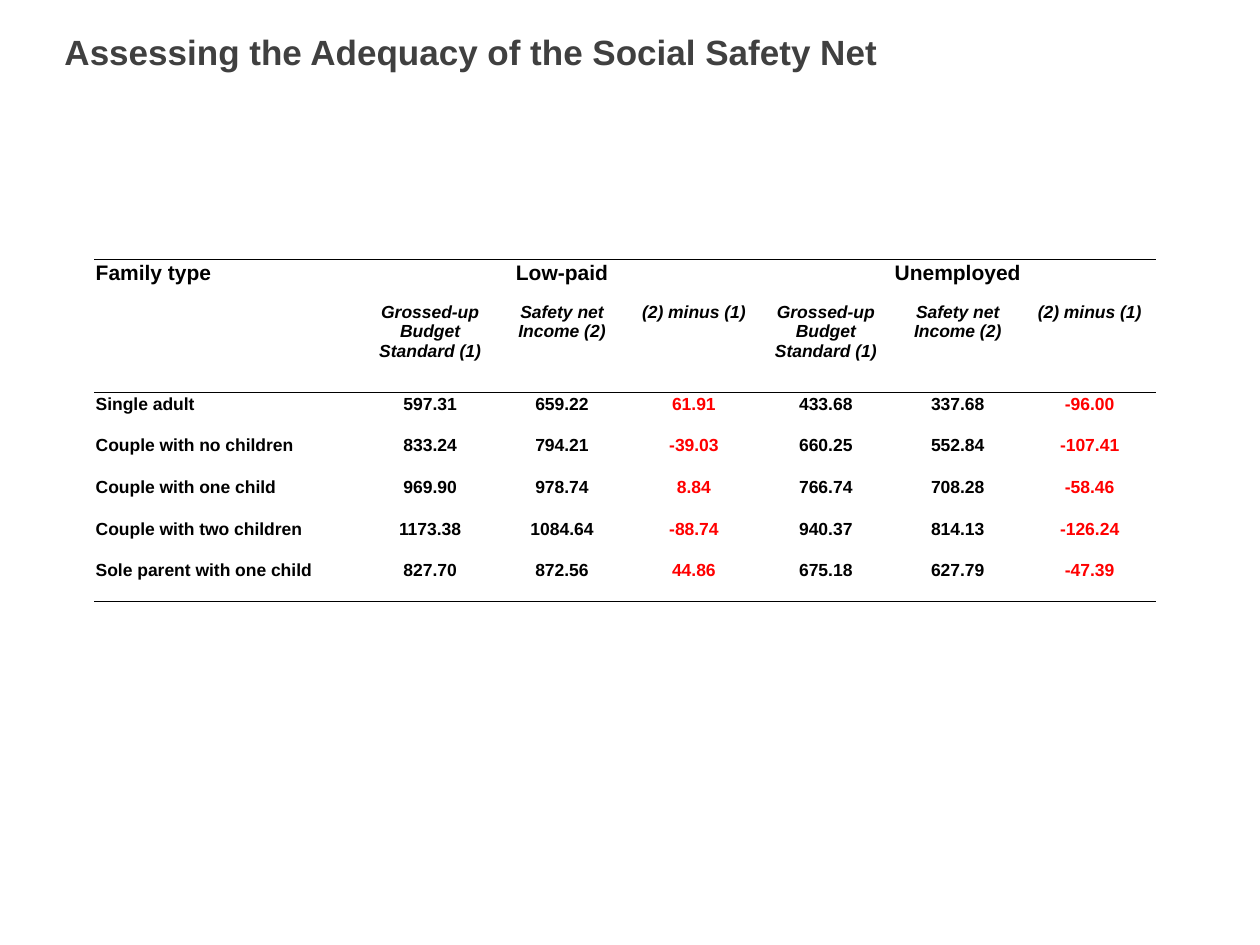
from lxml import etree
from pptx import Presentation
from pptx.dml.color import RGBColor
from pptx.enum.text import MSO_ANCHOR, MSO_AUTO_SIZE, PP_ALIGN
from pptx.oxml.ns import qn
from pptx.util import Cm, Pt

LEFT, CENTER = PP_ALIGN.LEFT, PP_ALIGN.CENTER
TOP, MIDDLE = MSO_ANCHOR.TOP, MSO_ANCHOR.MIDDLE
GROW = MSO_AUTO_SIZE.SHAPE_TO_FIT_TEXT

TITLE_GREY = RGBColor(0x40, 0x40, 0x40)
BLACK = RGBColor(0, 0, 0)
RED = RGBColor(0xFF, 0, 0)
FONT = "Arial"

MEASURES = ["Grossed-up Budget Standard (1)", "Safety net Income (2)", "(2) minus (1)"]
ROWS = [
    ["Family type", "Low-paid", "", "", "Unemployed", "", ""],
    [""] + MEASURES * 2,
    ["Single adult", "597.31", "659.22", "61.91", "433.68", "337.68", "-96.00"],
    ["Couple with no children", "833.24", "794.21", "-39.03", "660.25", "552.84", "-107.41"],
    ["Couple with one child", "969.90", "978.74", "8.84", "766.74", "708.28", "-58.46"],
    ["Couple with two children", "1173.38", "1084.64", "-88.74", "940.37", "814.13", "-126.24"],
    ["Sole parent with one child", "827.70", "872.56", "44.86", "675.18", "627.79", "-47.39"],
]
GROUP_ROW, MEASURE_ROW, FIRST_DATA_ROW = 0, 1, 2
GROUP_STARTS = (1, 4)
DIFFERENCE_COLUMNS = (3, 6)
RULED_ABOVE = (GROUP_ROW, FIRST_DATA_ROW)
RULED_BELOW = (MEASURE_ROW, len(ROWS) - 1)


def format_paragraph(paragraph, size, color, align, italic=False):
    paragraph.alignment = align
    font = paragraph.font
    font.name, font.size, font.bold, font.italic = FONT, Pt(size), True, italic
    font.color.rgb = color


def rule_cell(cell, above, below):
    properties = cell._tc.get_or_add_tcPr()
    for side, ruled in (("L", False), ("R", False), ("T", above), ("B", below)):
        line = etree.SubElement(properties, qn(f"a:ln{side}"), w=str(Pt(0.5)))
        if ruled:
            fill = etree.SubElement(line, qn("a:solidFill"))
            etree.SubElement(fill, qn("a:srgbClr"), val=str(BLACK))
        else:
            etree.SubElement(line, qn("a:noFill"))


def add_title(slide, left, top, width, height):
    title = slide.shapes.title
    title.left, title.top, title.width, title.height = left, top, width, height
    frame = title.text_frame
    frame.text = "Assessing the Adequacy of the Social Safety Net"
    frame.margin_left = frame.margin_right = frame.margin_top = frame.margin_bottom = 0
    frame.vertical_anchor = MIDDLE
    frame.auto_size = GROW
    format_paragraph(frame.paragraphs[0], 20, TITLE_GREY, LEFT)


def add_adequacy_table(slide, left, top, width, height):
    column_count = len(ROWS[0])
    table = slide.shapes.add_table(len(ROWS), column_count, left, top, width, height).table
    table.first_row = table.horz_banding = False

    family_width, measure_height = Cm(5.44), Cm(1.85)
    for index, column in enumerate(table.columns):
        column.width = family_width if index == 0 else (width - family_width) // (column_count - 1)
    for index, row in enumerate(table.rows):
        row.height = measure_height if index == MEASURE_ROW else (height - measure_height) // (len(ROWS) - 1)

    for start in GROUP_STARTS:
        table.cell(GROUP_ROW, start).merge(table.cell(GROUP_ROW, start + len(MEASURES) - 1))

    for r, texts in enumerate(ROWS):
        for c, text in enumerate(texts):
            cell = table.cell(r, c)
            cell.text = text
            cell.margin_left = cell.margin_right = cell.margin_top = Cm(0.03)
            cell.margin_bottom = Cm(0.13)
            cell.vertical_anchor = TOP
            is_difference = r >= FIRST_DATA_ROW and c in DIFFERENCE_COLUMNS
            format_paragraph(
                cell.text_frame.paragraphs[0],
                size=12 if r == GROUP_ROW else 10,
                color=RED if is_difference else BLACK,
                align=LEFT if c == 0 else CENTER,
                italic=r == MEASURE_ROW,
            )
            rule_cell(cell, r in RULED_ABOVE, r in RULED_BELOW)
            cell.fill.background()


def main():
    presentation = Presentation()
    presentation.slide_width, presentation.slide_height = Cm(25.4), Cm(19.05)
    slide = presentation.slides.add_slide(presentation.slide_layouts[5])
    add_title(slide, Cm(1.3), Cm(0.53), Cm(22.8), Cm(1))
    add_adequacy_table(slide, Cm(1.9), Cm(5.23), Cm(21.4), Cm(6.89))
    presentation.save("out.pptx")


if __name__ == "__main__":
    main()
